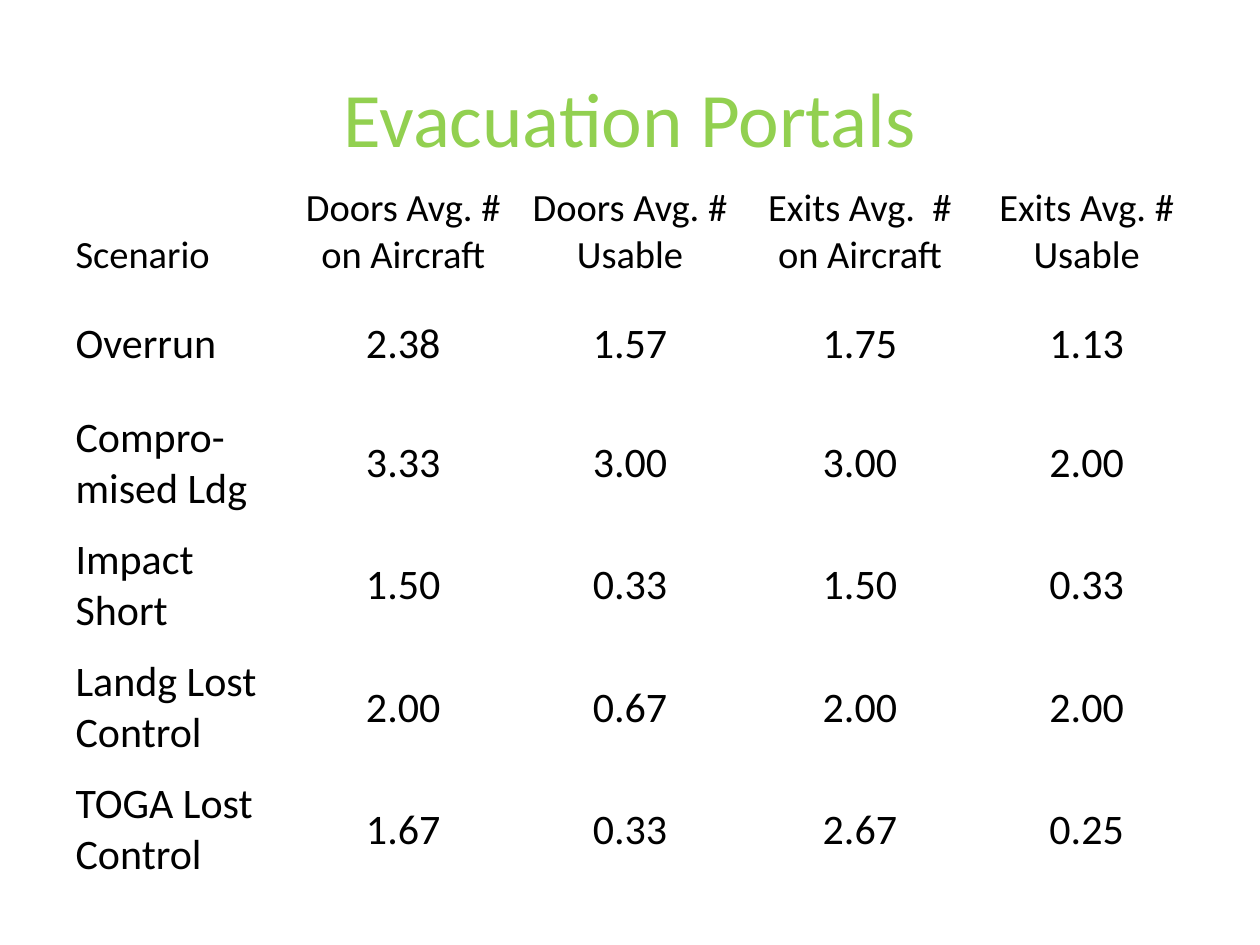
import pptx
import pptx.util
import pptx.dml.color
import pptx.enum.text

Pt = pptx.util.Pt
RGB = pptx.dml.color.RGBColor.from_string
ALIGN = pptx.enum.text.PP_ALIGN
ANCHOR = pptx.enum.text.MSO_ANCHOR

THEME = {
    "font": "Calibri",
    "title": {"color": "92D050", "size": 44},
    "header": {"color": "000000", "size": 22},
    "body": {"color": "000000", "size": 24},
    "background": "FFFFFF",
}

ROWS = [
    ["Scenario", "Doors Avg. # on Aircraft", "Doors Avg. # Usable",
     "Exits Avg.  # on Aircraft", "Exits Avg. # Usable"],
    ["Overrun", "2.38", "1.57", "1.75", "1.13"],
    ["Compro-mised Ldg", "3.33", "3.00", "3.00", "2.00"],
    ["Impact Short", "1.50", "0.33", "1.50", "0.33"],
    ["Landg Lost Control", "2.00", "0.67", "2.00", "2.00"],
    ["TOGA Lost Control", "1.67", "0.33", "2.67", "0.25"],
]
COL_WIDTHS = [129.6, 129.6, 129.6, 133.2, 126]
ROW_HEIGHTS = [67, 67] + [69.8] * 4


def write(tf, text, style, align):
    p = tf.paragraphs[0]
    p.alignment = align
    r = p.add_run()
    r.text = text
    formats = {"name": THEME["font"], "size": Pt(style["size"]), "bold": False}
    for name, value in formats.items():
        setattr(r.font, name, value)
    r.font.color.rgb = RGB(style["color"])


prs = pptx.Presentation()
prs.slide_width, prs.slide_height = Pt(720), Pt(540)
s = prs.slides.add_slide(prs.slide_layouts[5])
s.background.fill.solid()
s.background.fill.fore_color.rgb = RGB(THEME["background"])

title = s.shapes.title
box = {"left": 36, "top": 21.6, "width": 648, "height": 90}
for name, value in box.items():
    setattr(title, name, Pt(value))
title.text_frame.vertical_anchor = ANCHOR.MIDDLE
write(title.text_frame, "Evacuation Portals", THEME["title"], ALIGN.CENTER)

table = s.shapes.add_table(
    len(ROWS), len(COL_WIDTHS), Pt(36), Pt(96),
    Pt(sum(COL_WIDTHS)), Pt(sum(ROW_HEIGHTS))).table
table.first_row = table.horz_banding = False
for column, width in zip(table.columns, COL_WIDTHS):
    column.width = Pt(width)
for row, height in zip(table.rows, ROW_HEIGHTS):
    row.height = Pt(height)

for i, values in enumerate(ROWS):
    style = THEME["body"] if i else THEME["header"]
    for j, text in enumerate(values):
        cell = table.cell(i, j)
        cell.fill.background()
        cell.vertical_anchor = ANCHOR.MIDDLE if i else ANCHOR.BOTTOM
        write(cell.text_frame, text, style, ALIGN.CENTER if j else ALIGN.LEFT)

prs.save("out.pptx")
